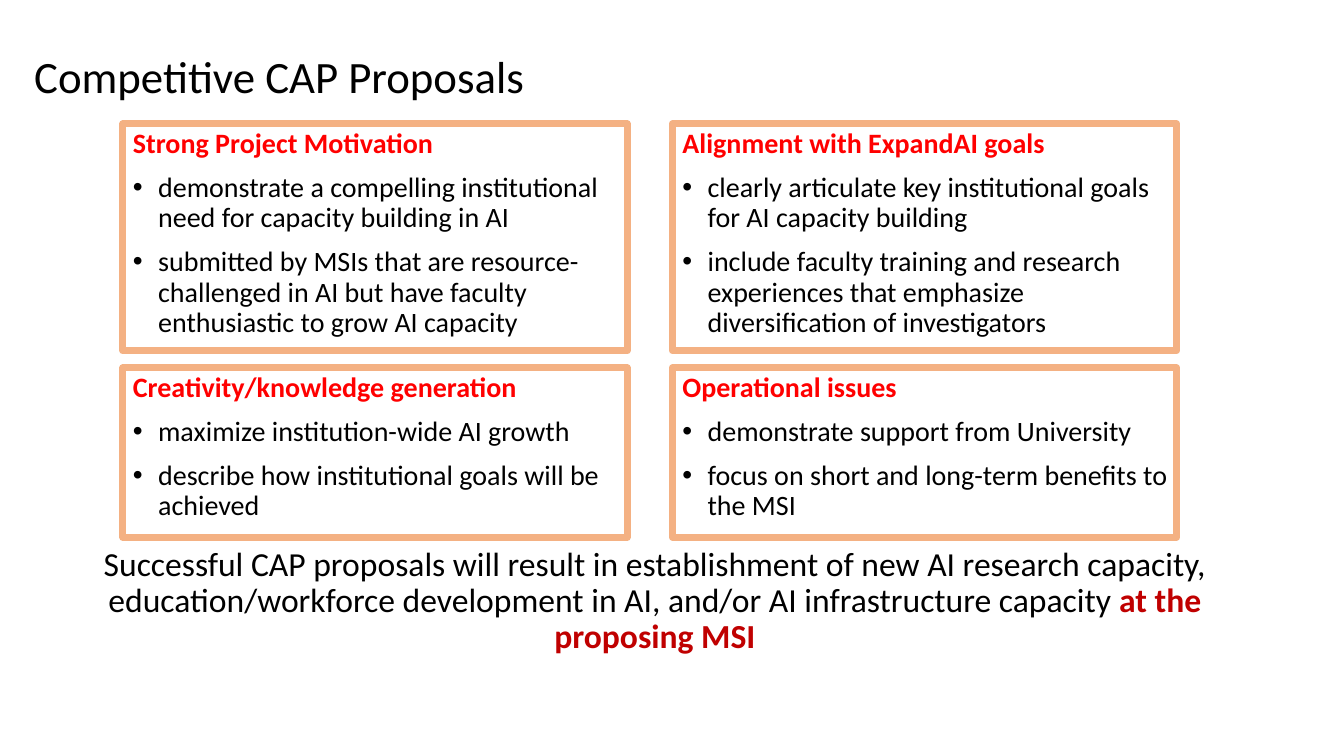
from pptx import Presentation
from pptx import util as u
from pptx.dml.color import RGBColor
from pptx.enum import shapes, text
from pptx.oxml.ns import qn
from lxml import etree


def color(value):
    return RGBColor.from_string(value)


def add_span(para, words, size, shade, bold=False):
    span = para.add_run()
    span.text = words
    span.font.name = "Calibri"
    span.font.size = u.Pt(size)
    span.font.bold = bold
    span.font.color.rgb = color(shade)


deck = Presentation()
deck.slide_width = u.Inches(13.33)
deck.slide_height = u.Inches(7.5)
page = deck.slides.add_slide(deck.slide_layouts[6])

column_lefts = [u.Inches(1.22), u.Inches(6.67)]
rows = [
    (u.Inches(1.23), u.Inches(2.25), [
        ("Strong Project Motivation", [
            "demonstrate a compelling institutional need for capacity building in AI",
            "submitted by MSIs that are resource-challenged in AI but have faculty enthusiastic to grow AI capacity",
        ]),
        ("Alignment with ExpandAI goals", [
            "clearly articulate key institutional goals for AI capacity building",
            "include faculty training and research experiences that emphasize diversification of investigators",
        ]),
    ]),
    (u.Inches(3.65), u.Inches(1.68), [
        ("Creativity/knowledge generation", [
            "maximize institution-wide AI growth",
            "describe how institutional goals will be achieved",
        ]),
        ("Operational issues", [
            "demonstrate support from University",
            "focus on short and long-term benefits to the MSI",
        ]),
    ]),
]

title = page.shapes.add_textbox(u.Inches(0.24), u.Inches(0.43), u.Inches(12.28), u.Inches(0.64))
title.text_frame.word_wrap = True
title.text_frame.vertical_anchor = text.MSO_ANCHOR.MIDDLE
add_span(title.text_frame.paragraphs[0], "Competitive CAP Proposals", 32, "000000")

for top, frame_height, cards in rows:
    for left, (heading, points) in zip(column_lefts, cards):
        card = page.shapes.add_group_shape()
        box = card.shapes.add_textbox(left, top, u.Inches(5.2), u.Inches(2.5))
        box.text_frame.word_wrap = True
        para = box.text_frame.paragraphs[0]
        para.line_spacing = 0.9
        add_span(para, heading, 20, "FF0000", True)
        for point in points:
            para = box.text_frame.add_paragraph()
            para.line_spacing = 0.9
            para.space_before = u.Pt(10)
            layout = para._p.get_or_add_pPr()
            layout.set("marL", str(u.Inches(0.25)))
            layout.set("indent", str(-u.Inches(0.25)))
            etree.SubElement(layout, qn("a:buFont")).set("typeface", "Arial")
            etree.SubElement(layout, qn("a:buChar")).set("char", "•")
            add_span(para, point, 20, "000000")

        frame = card.shapes.add_shape(shapes.MSO_SHAPE.RECTANGLE, left, top, u.Inches(5), frame_height)
        frame.shadow.inherit = False
        frame.fill.background()
        frame.line.color.rgb = color("F4B183")
        frame.line.width = u.Pt(5)

summary = page.shapes.add_textbox(u.Inches(0.54), u.Inches(5.38), u.Inches(11.91), u.Inches(1.31))
summary.text_frame.word_wrap = True
para = summary.text_frame.paragraphs[0]
para.alignment = text.PP_ALIGN.CENTER
para.line_spacing = 0.9
add_span(para, "Successful CAP proposals will result in establishment of new AI research capacity, "
               "education/workforce development in AI, and/or AI infrastructure capacity ", 24, "000000")
add_span(para, "at the proposing MSI", 24, "C00000", True)

deck.save("out.pptx")
